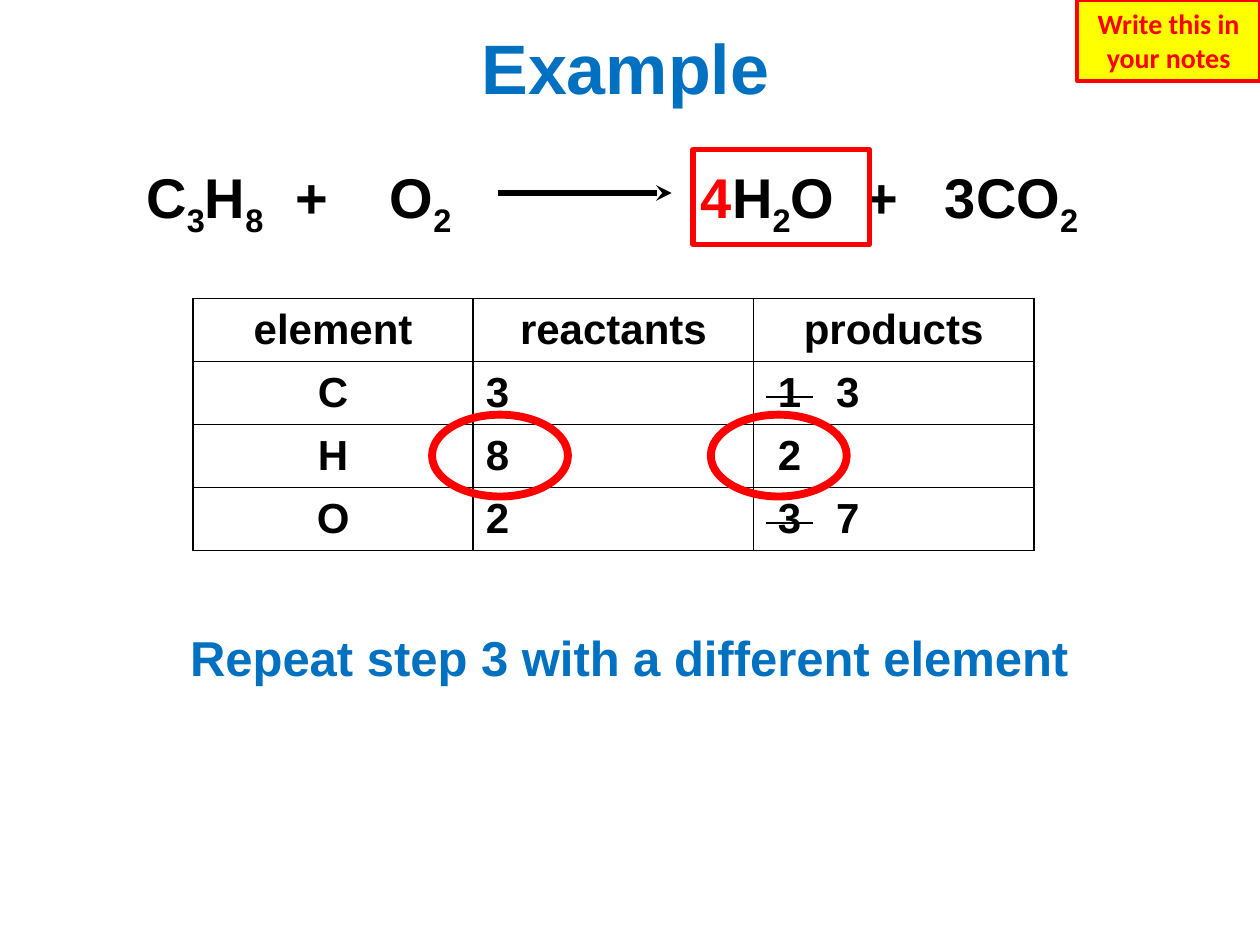
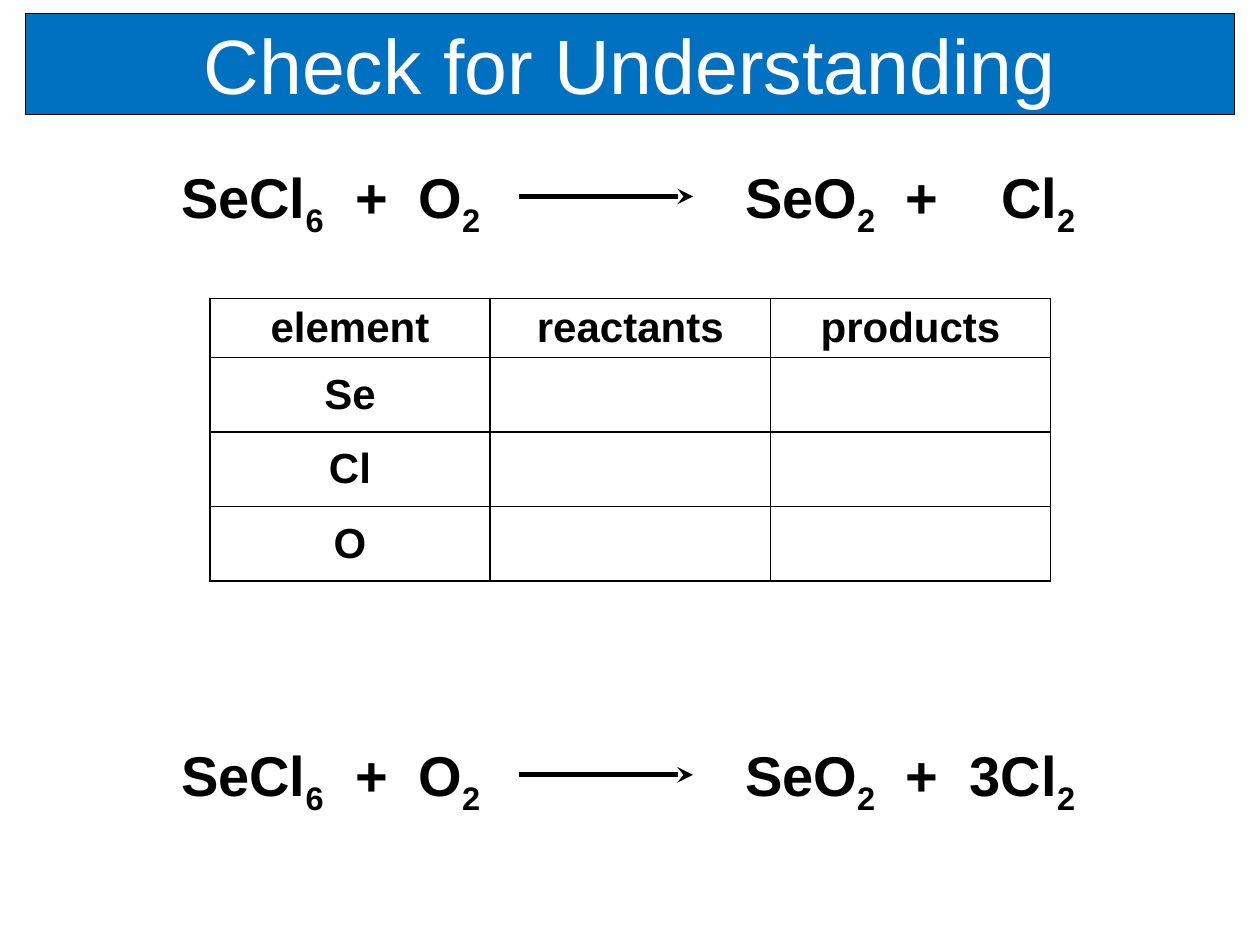
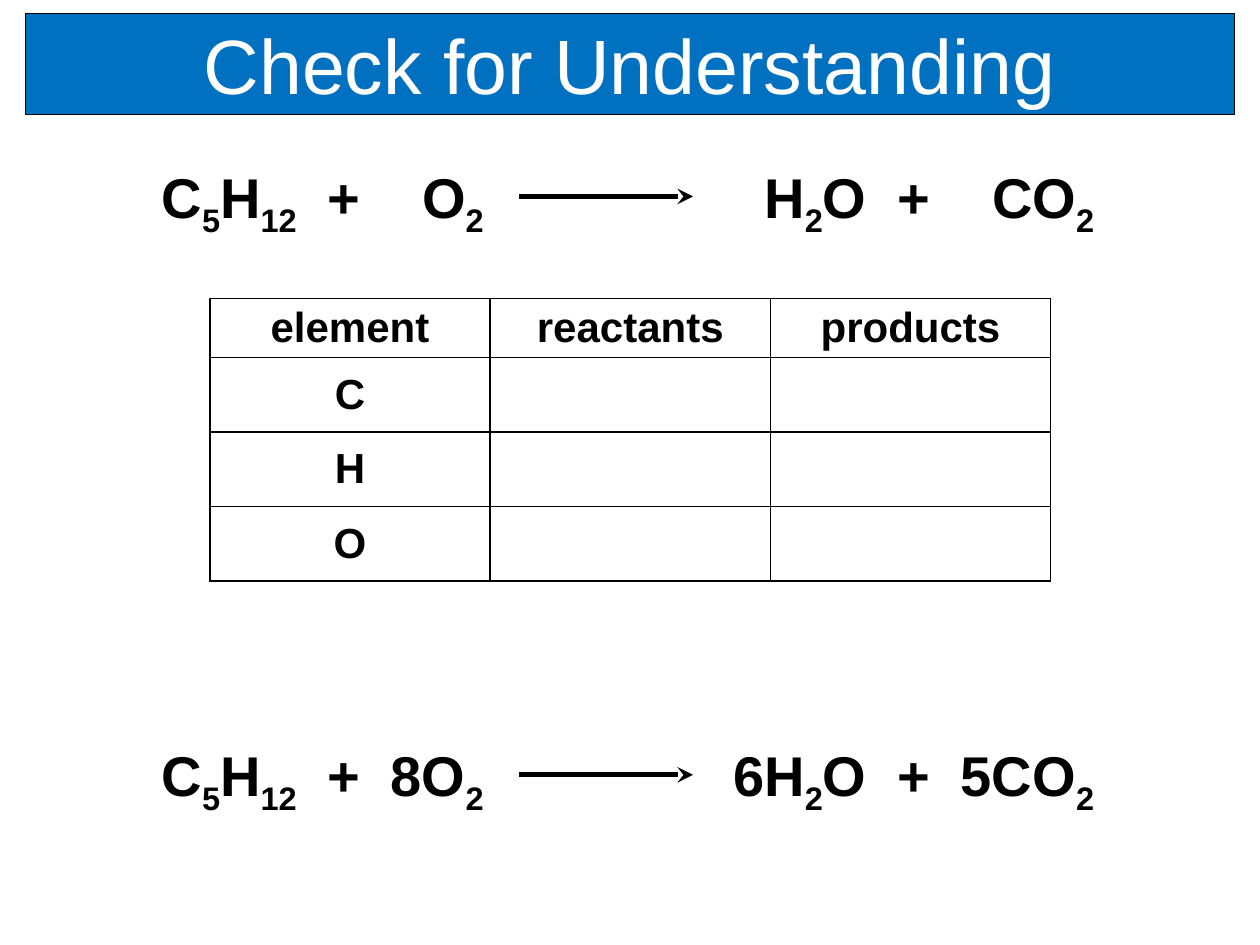
from itertools import groupby

from lxml.etree import SubElement
from pptx import Presentation
from pptx.dml.color import RGBColor
from pptx.enum.shapes import MSO_CONNECTOR, MSO_SHAPE
from pptx.enum.text import MSO_ANCHOR, PP_ALIGN
from pptx.oxml.ns import qn
from pptx.util import Cm, Pt

HUES = {"blue": "0070C0", "red": "FF0000", "yellow": "FFFF00",
        "black": "000000", "white": "FFFFFF"}
WIDE = 25.4
DIGIT = 0.63    # room kept for a coefficient still to be found
HEAD = ["element", "reactants", "products"]


def hue(name):
    return RGBColor.from_string(HUES[name])


def add_run(par, text, size, color="black", bold=True, face="Arial", **marks):
    run = par.add_run()
    run.text = text
    font = run.font
    font.name, font.size, font.bold = face, Pt(size), bold
    font.color.rgb = hue(color)
    for key, value in marks.items():    # baseline or strike
        font._element.set(key, value)


def set_tabs(par, stops):
    tabs = SubElement(par._p.get_or_add_pPr(), qn("a:tabLst"))
    for stop in stops:
        SubElement(tabs, qn("a:tab"), pos=str(Cm(stop)), algn="l")


def add_box(slide, x, y, w, h):
    frame = slide.shapes.add_textbox(Cm(x), Cm(y), Cm(w), Cm(h)).text_frame
    frame.word_wrap = True
    return frame


def add_line(slide, text, area, size, anchor=MSO_ANCHOR.TOP):
    frame = add_box(slide, *area)
    frame.vertical_anchor = anchor
    par = frame.paragraphs[0]
    par.alignment = PP_ALIGN.CENTER
    add_run(par, text, size, "blue")


def add_form(slide, kind, area, line, width, fill=None):
    form = slide.shapes.add_shape(kind, *map(Cm, area))
    form.shadow.inherit = False
    form.line.color.rgb, form.line.width = hue(line), Pt(width)
    if fill:
        form.fill.solid()
        form.fill.fore_color.rgb = hue(fill)
    else:
        form.fill.background()
    return form


def add_label(form, text, size, color, **style):
    frame = form.text_frame
    frame.word_wrap = True
    frame.vertical_anchor = MSO_ANCHOR.MIDDLE
    par = frame.paragraphs[0]
    par.alignment = PP_ALIGN.CENTER
    add_run(par, text, size, color, **style)


def add_arrow(slide, x, y):
    arrow = slide.shapes.add_connector(
        MSO_CONNECTOR.STRAIGHT, Cm(x), Cm(y), Cm(x + 3.51), Cm(y))
    arrow.line.color.rgb, arrow.line.width = hue("black"), Pt(3)
    SubElement(arrow.line._get_or_add_ln(), qn("a:tailEnd"), type="stealth")
    SubElement(arrow._element.spPr, qn("a:effectLst"))


def add_term(par, term, tint):
    """Digits after a letter are subscripts, leading ones a coefficient."""
    lead = True
    for digit, chars in groupby(term, str.isdigit):
        text = "".join(chars)
        if digit and not lead:
            add_run(par, text, 32, baseline="-25000")
        else:
            add_run(par, text, 32, tint if digit else "black")
        lead = False


def add_sum(slide, terms, stops, left, top, tint="black"):
    """Terms and plus signs, one per stop; "_" leaves a coefficient blank."""
    frame = add_box(slide, left, top, WIDE - 2 * left, 1.63)
    start = stops[0]
    frame.margin_left = Cm(start - left)
    par = frame.paragraphs[0]
    spots = [stop + DIGIT * term.startswith("_") - start
             for term, stop in zip(terms, stops)]
    set_tabs(par, spots[1:])
    for place, term in enumerate(terms):
        if place:
            add_run(par, "\t", 32)
        add_term(par, term.lstrip("_"), tint if term[0] == "4" else "black")


def add_edges(cell):
    props = cell._tc.get_or_add_tcPr()
    for place, side in enumerate(("lnL", "lnR", "lnT", "lnB")):
        edge = SubElement(props, qn("a:" + side), w=str(Pt(1)))
        props.remove(edge)
        props.insert(place, edge)
        fill = SubElement(edge, qn("a:solidFill"))
        SubElement(fill, qn("a:srgbClr"), val=HUES["black"])


def fill_cell(cell, text, center):
    cell.vertical_anchor = MSO_ANCHOR.MIDDLE
    cell.margin_top = cell.margin_bottom = Cm(0.1)
    cell.fill.background()
    add_edges(cell)
    par = cell.text_frame.paragraphs[0]
    if center:
        par.alignment = PP_ALIGN.CENTER
    if isinstance(text, tuple):    # struck count, then the new one
        old, new = text
        set_tabs(par, [1.41])
        add_run(par, f" {old} ", 24, strike="sngStrike")
        add_run(par, "\t" + new, 24)
    elif text:
        add_run(par, text, 24)


def add_grid(slide, rows, left, heights):
    cols = len(HEAD)
    grid = slide.shapes.add_table(
        len(rows) + 1, cols, Cm(left), Cm(6.02),
        Cm(5.65 * cols), Cm(sum(heights))).table
    grid.first_row = grid.horz_banding = False
    for col in grid.columns:
        col.width = Cm(5.65)
    for r, row in enumerate([HEAD] + rows):
        grid.rows[r].height = Cm(heights[r])
        for c, text in enumerate(row):
            fill_cell(grid.cell(r, c), text, r == 0 or c == 0)


def add_sample(slide):
    add_line(slide, "Example", (0.25, 0.23, 24.71, 2.24), 40, MSO_ANCHOR.MIDDLE)
    add_line(slide, "Repeat step 3 with a different element",
             (1.32, 12.52, 22.73, 4.17), 28)
    # Equation
    add_sum(slide, ["C3H8", "+", "_O2", "4H2O", "+", "3CO2"],
            [2.95, 5.95, 7.23, 14.13, 17.44, 19.05], 2.74, 3.15, "red")
    add_arrow(slide, 10.03, 3.89)
    # Atom counts
    add_grid(slide, [["C", "3", ("1", "3")], ["H", "8", " 2"],
                     ["O", "2", ("3", "7")]], 3.89, [1.27] * 4)
    # Red marks
    for x in (14.33, 8.71):
        add_form(slide, MSO_SHAPE.OVAL, (x, 8.36, 2.74, 1.65), "red", 4.5)
    add_form(slide, MSO_SHAPE.RECTANGLE, (13.97, 3.02, 3.56, 1.91), "red", 3)
    note = add_form(slide, MSO_SHAPE.RECTANGLE, (21.72, 0, 3.68, 1.63),
                    "red", 2.25, "yellow")
    add_label(note, "Write this in your notes", 16, "red", face="Calibri")


def add_check(slide, atoms, left, stops, task, answer):
    add_grid(slide, [[atom, "", ""] for atom in atoms], 4.23,
             [1.19, 1.5, 1.5, 1.5])
    band = add_form(slide, MSO_SHAPE.RECTANGLE, (0.51, 0.28, 24.38, 2.03),
                    "black", 0.75, "blue")
    add_label(band, "Check for Understanding", 44, "white", bold=False)
    # Task above the table, answer below
    for terms, top in ((task, 3.15), (answer, 14.81)):
        add_sum(slide, terms, stops, left, top)
        add_arrow(slide, 10.46, top + 0.81)


def main():
    deck = Presentation()
    deck.slide_width, deck.slide_height = Cm(WIDE), Cm(19.05)
    blank = deck.slide_layouts[6]
    add_sample(deck.slides.add_slide(blank))
    add_check(deck.slides.add_slide(blank), ["Se", "Cl", "O"], 2.92,
              [3.65, 7.16, 8.44, 15.02, 18.26, 19.55],
              ["SeCl6", "+", "O2", "SeO2", "+", "_Cl2"],
              ["SeCl6", "+", "O2", "SeO2", "+", "3Cl2"])
    add_check(deck.slides.add_slide(blank), ["C", "H", "O"], 2.79,
              [3.26, 6.6, 7.88, 14.78, 18.09, 19.37],
              ["C5H12", "+", "_O2", "_H2O", "+", "_CO2"],
              ["C5H12", "+", "8O2", "6H2O", "+", "5CO2"])
    deck.save("out.pptx")


if __name__ == "__main__":
    main()
